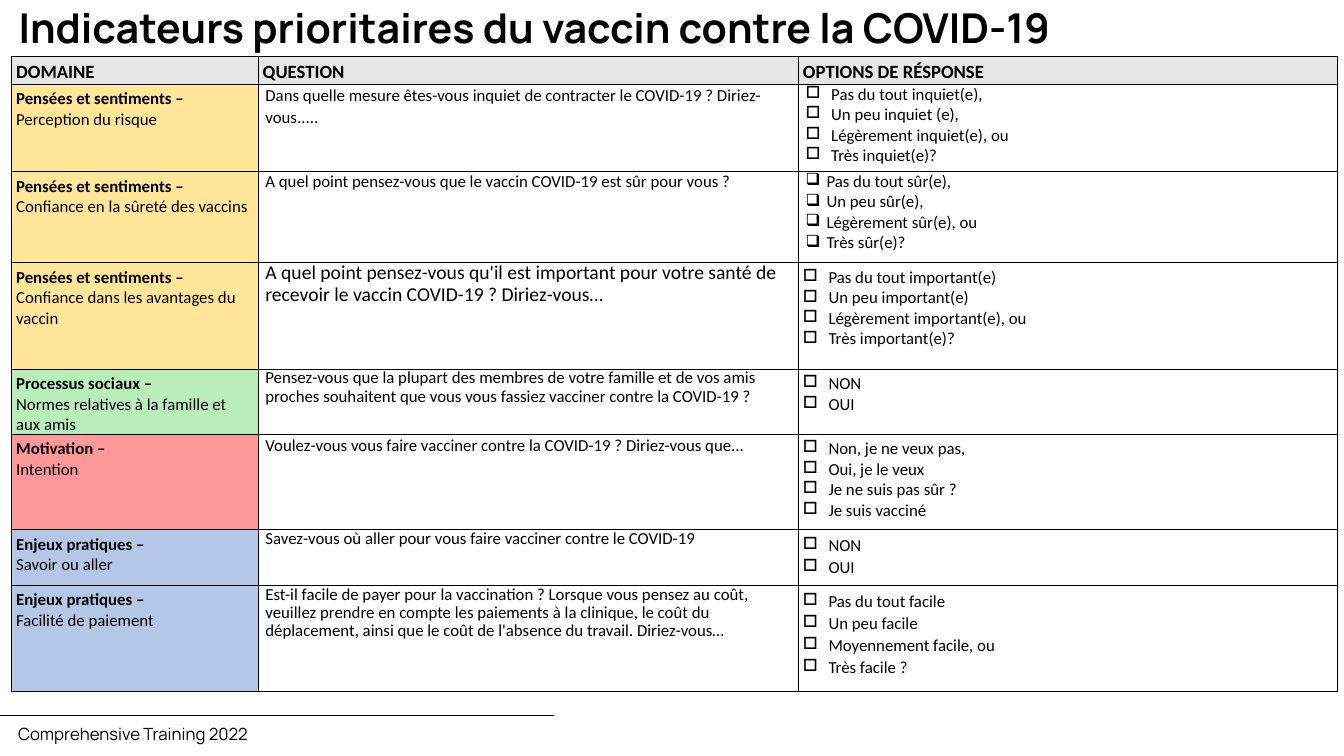
import pptx
import pptx.dml.color
import pptx.enum.shapes
import pptx.enum.text
import pptx.oxml
import pptx.oxml.ns
import pptx.util
from dataclasses import dataclass

Inches = pptx.util.Inches
Pt = pptx.util.Pt
ANCHOR = pptx.enum.text.MSO_ANCHOR


@dataclass
class Theme:
    head: str = "Manrope"
    body: str = "Calibri"
    ink: str = "000000"
    grey: str = "E7E6E6"
    gold: str = "FFE699"
    green: str = "B9EDB9"
    red: str = "FF9999"
    blue: str = "B4C7E6"
    title: int = 44
    large: int = 21
    label: int = 20
    text: int = 18


@dataclass
class Para:
    text: str
    size: int = Theme.text
    bold: bool = False
    line: float = 1.0
    after: int = 0
    mark: str = ""
    hang: float = 0.38
    tab: float = 0


# Cell margins: left, top, right, bottom
PAD = (0.07, 0.07, 0.15, 0)
FLUSH = (0.11, 0, 0.11, 0)
HEAD = (0.07, 0.07, 0.01, 0)


def rgb(code):
    return pptx.dml.color.RGBColor.from_string(code)


def add_xml(parent, body):
    space = pptx.oxml.ns.nsdecls("a")
    tag, rest = body.split(">", 1)
    slash = "/" if tag.endswith("/") else ""
    xml = f"{tag.rstrip('/')} {space}{slash}>{rest}"
    parent.append(pptx.oxml.parse_xml(xml))


class Deck:
    def __init__(self, theme, slide):
        self.theme, self.slide = theme, slide

    def fill_text(self, frame, paras, font):
        frame.word_wrap = True
        for i, item in enumerate(paras):
            para = frame.paragraphs[0] if i == 0 else frame.add_paragraph()
            para.text = item.text
            if item.mark:
                prop = para._p.get_or_add_pPr()
                prop.set("marL", str(Inches(item.hang)))
                prop.set("indent", str(-Inches(item.hang)))
                add_xml(prop, f'<a:buClr><a:srgbClr val="{self.theme.ink}"/></a:buClr>')
                add_xml(prop, f'<a:buChar char="{item.mark}"/>')
                if item.tab:
                    stop = Inches(item.tab)
                    add_xml(prop, f'<a:tabLst><a:tab pos="{stop}" algn="l"/></a:tabLst>')
            if item.line != 1:
                para.line_spacing = item.line
            if item.after:
                para.space_after = Pt(item.after)
            for run in para.runs:
                run.font.name, run.font.size = font, Pt(item.size)
                run.font.bold = item.bold
                run.font.color.rgb = rgb(self.theme.ink)

    def label(self, box, para, anchor=ANCHOR.TOP):
        shape = self.slide.shapes.add_textbox(*map(Inches, box))
        shape.text_frame.vertical_anchor = anchor
        self.fill_text(shape.text_frame, [para], self.theme.head)

    def rule(self, left, right, top):
        line = self.slide.shapes.add_connector(
            pptx.enum.shapes.MSO_CONNECTOR.STRAIGHT,
            Inches(left), Inches(top), Inches(right), Inches(top))
        line.line.color.rgb = rgb(self.theme.ink)
        line.line.width = Pt(0.5)
        add_xml(line._element.spPr, "<a:effectLst/>")

    def cell(self, cell, paras, pad, fill=None, anchor=ANCHOR.TOP):
        (cell.margin_left, cell.margin_top,
         cell.margin_right, cell.margin_bottom) = map(Inches, pad)
        cell.vertical_anchor = anchor
        prop = cell._tc.get_or_add_tcPr()
        for side in "LRTB":
            add_xml(prop, f'<a:ln{side} w="{Pt(1)}"><a:solidFill>'
                    f'<a:srgbClr val="{self.theme.ink}"/></a:solidFill></a:ln{side}>')
        if fill:
            cell.fill.solid()
            cell.fill.fore_color.rgb = rgb(fill)
        else:
            cell.fill.background()
        self.fill_text(cell.text_frame, paras, self.theme.body)

    def table(self, left, top, cols, rows):
        frame = self.slide.shapes.add_table(
            len(rows), len(cols), Inches(left), Inches(top),
            Inches(sum(cols)), Inches(sum(rows)))
        grid = frame.table
        grid.first_row = grid.horz_banding = False
        for col, width in zip(grid.columns, cols):
            col.width = Inches(width)
        for row, height in zip(grid.rows, rows):
            row.height = Inches(height)
        return grid


def options(texts, after=0, mark="□", **style):
    paras = [Para(text, mark=mark, **style) for text in texts]
    paras[-1].after = after
    return paras


def main():
    show = pptx.Presentation()
    show.slide_width, show.slide_height = Inches(20), Inches(11.25)
    theme = Theme()
    deck = Deck(theme, show.slides.add_slide(show.slide_layouts[6]))

    # Footer
    deck.rule(-0.08, 8.25, 10.65)
    deck.label((0.17, 10.72, 6.58, 0.4),
               Para("Comprehensive Training 2022", theme.text))

    # Title
    deck.label((0.18, 0.06, 17.23, 0.78),
               Para("Indicateurs prioritaires du vaccin contre la COVID-19",
                    theme.title, True, 0.9), ANCHOR.MIDDLE)

    # Table content: fill, domain, topic, question, answers, answer padding
    mind, issue = "Pensées et sentiments –", "Enjeux pratiques –"
    items = [
        (theme.gold, mind, "Perception du risque",
         Para("Dans quelle mesure êtes-vous inquiet de contracter le COVID-19 ? "
              "Diriez-vous.....", line=1.07, after=6),
         options(["Pas du tout inquiet(e),", "Un peu inquiet (e),",
                  "Légèrement inquiet(e), ou", "Très inquiet(e)?"], tab=0.25), FLUSH),
        (theme.gold, mind, "Confiance en la sûreté des vaccins",
         Para("A quel point pensez-vous que le vaccin COVID-19 est sûr pour vous ?"),
         options(["Pas du tout sûr(e),", "Un peu sûr(e),", "Légèrement sûr(e), ou",
                  "Très sûr(e)?"], mark="❑", hang=0.31), FLUSH),
        (theme.gold, mind, "Confiance dans les avantages du vaccin",
         Para("A quel point pensez-vous qu'il est important pour votre santé de "
              "recevoir le vaccin COVID-19 ? Diriez-vous…", theme.large, line=0.9),
         options(["Pas du tout important(e)", "Un peu important(e)",
                  "Légèrement important(e), ou", "Très important(e)?"]), PAD),
        (theme.green, "Processus sociaux –", "Normes relatives à la famille et aux amis",
         Para("Pensez-vous que la plupart des membres de votre famille et de vos amis "
              "proches souhaitent que vous vous fassiez vacciner contre la COVID-19 ?",
              line=0.9),
         options(["NON", "OUI"], after=8), PAD),
        (theme.red, "Motivation –", "Intention",
         Para("Voulez-vous vous faire vacciner contre la COVID-19 ? "
              "Diriez-vous que...", line=1.07, after=6),
         options(["Non, je ne veux pas,", "Oui, je le veux", "Je ne suis pas sûr ?",
                  "Je suis vacciné"]), PAD),
        (theme.blue, issue, "Savoir ou aller",
         Para("Savez-vous où aller pour vous faire vacciner contre le COVID-19", line=0.9),
         options(["NON", "OUI"], after=8, line=1.07), PAD),
        (theme.blue, issue, "Facilité de paiement",
         Para("Est-il facile de payer pour la vaccination ? Lorsque vous pensez au coût, "
              "veuillez prendre en compte les paiements à la clinique, le coût du "
              "déplacement, ainsi que le coût de l'absence du travail. Diriez-vous…",
              line=0.9),
         options(["Pas du tout facile", "Un peu facile", "Moyennement facile, ou",
                  "Très facile ?"], line=1.07), PAD),
    ]

    # Table
    grid = deck.table(0.17, 0.84, (3.67, 8.04, 8.02),
                      (0.41, 1.3, 1.36, 1.58, 0.83, 1.42, 0.83, 1.58))
    for col, name in enumerate(("DOMAINE", "QUESTION", "OPTIONS DE RÉSPONSE")):
        deck.cell(grid.cell(0, col), [Para(name, theme.label, True)],
                  HEAD, theme.grey, ANCHOR.MIDDLE)
    for row, (fill, domain, topic, query, answers, pad) in enumerate(items, 1):
        deck.cell(grid.cell(row, 0), [Para(domain, bold=True), Para(topic)], PAD, fill)
        deck.cell(grid.cell(row, 1), [query], FLUSH)
        deck.cell(grid.cell(row, 2), answers, pad)

    show.save("out.pptx")


if __name__ == "__main__":
    main()
